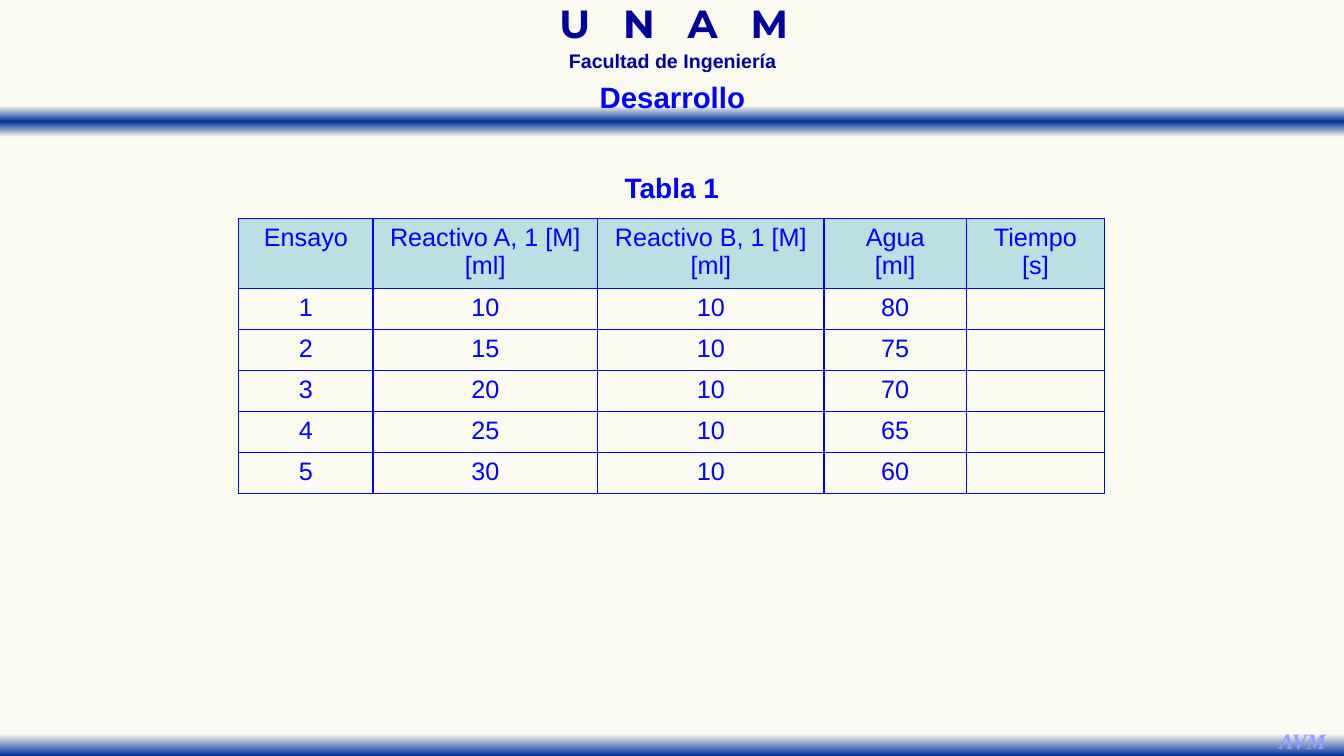
from lxml import etree
from pptx import Presentation
from pptx.dml.color import RGBColor
from pptx.enum.shapes import MSO_SHAPE as Shape
from pptx.enum.text import MSO_ANCHOR as Anchor, MSO_AUTO_SIZE as AutoSize, PP_ALIGN as Align
from pptx.oxml import parse_xml
from pptx.oxml.ns import nsdecls, qn
from pptx.util import Pt

CREAM = RGBColor(0xFA, 0xFA, 0xF0)
BAND_EDGE = RGBColor(0xFA, 0xFA, 0xF2)
BAND_BLUE = RGBColor(0x00, 0x33, 0x99)
NAVY = RGBColor(0x00, 0x00, 0x99)
BLUE = RGBColor(0x00, 0x00, 0xFF)
LILAC = RGBColor(0x99, 0x99, 0xFF)
HEADER_TEAL = RGBColor(0xBB, 0xE0, 0xE3)
WHITE = RGBColor(0xFF, 0xFF, 0xFF)


class SlideBuilder:
    """Holds the style and the current slide."""
    font = "Arial"
    color = BLUE
    table_size = 18

    def __init__(self, slide):
        self.slide = slide
        self.shapes = slide.shapes
        slide.background.fill.solid()
        slide.background.fill.fore_color.rgb = CREAM

    def run(self, paragraph, text, size, color=None, font=None,
            bold=False, italic=False, tracking=0):
        run = paragraph.add_run()
        run.text = text
        style = run.font
        style.name, style.size = font or self.font, Pt(size)
        style.bold, style.italic = bold, italic
        style.color.rgb = color or self.color
        if tracking:
            run.font._element.set("spc", str(tracking))

    def band(self, top, height, stops):
        """Full-width bar with a vertical gradient."""
        bar = self.shapes.add_shape(Shape.RECTANGLE, 0, Pt(top), Pt(960), Pt(height))
        marks = "".join(f'<a:gs pos="{pos * 1000}"><a:srgbClr val="{color}"/></a:gs>'
                        for pos, color in stops)
        gradient = parse_xml(f'<a:gradFill {nsdecls("a")} rotWithShape="1"><a:gsLst>{marks}'
                             '</a:gsLst><a:lin ang="5400000" scaled="0"/></a:gradFill>')
        bar.element.spPr.find(qn("a:prstGeom")).addnext(gradient)
        bar.line.fill.background()
        bar.shadow.inherit = False

    def fit(self, frame, wrap):
        frame.word_wrap = wrap
        frame.auto_size = AutoSize.SHAPE_TO_FIT_TEXT
        paragraph = frame.paragraphs[0]
        paragraph.alignment = Align.CENTER
        return paragraph

    def text(self, box, pieces, size, spacing=None, wrap=True, **style):
        """Centred one-line text; each piece is (text, tracking)."""
        frame = self.shapes.add_textbox(*map(Pt, box)).text_frame
        paragraph = self.fit(frame, wrap)
        if spacing:
            paragraph.line_spacing = spacing
        for words, tracking in pieces:
            self.run(paragraph, words, size, tracking=tracking, **style)

    def title(self, box, words, size):
        title = self.shapes.title
        title.left, title.top, title.width, title.height = map(Pt, box)
        paragraph = self.fit(title.text_frame, False)
        title.text_frame.vertical_anchor = Anchor.BOTTOM
        self.run(paragraph, words, size, bold=True)
        self.shapes.element.append(title.element)  # in front of the band

    def cell(self, cell, lines, fill, alpha=None):
        frame = cell.text_frame
        for index, line in enumerate(lines):
            paragraph = frame.add_paragraph() if index else frame.paragraphs[0]
            paragraph.alignment = Align.CENTER
            if line:
                self.run(paragraph, line, self.table_size)
        # Borders come before the fill
        properties = cell._tc.get_or_add_tcPr()
        for side in "LRTB":
            properties.append(parse_xml(
                f'<a:ln{side} {nsdecls("a")} w="12700"><a:solidFill>'
                f'<a:srgbClr val="{self.color}"/></a:solidFill></a:ln{side}>'))
        if fill is None:
            cell.fill.background()
            return
        cell.fill.solid()
        cell.fill.fore_color.rgb = fill
        if alpha:
            color = properties.find(qn("a:solidFill")).find(qn("a:srgbClr"))
            etree.SubElement(color, qn("a:alpha")).set("val", str(alpha * 1000))

    def table(self, left, top, widths, heights, header, rows):
        table = self.shapes.add_table(len(heights), len(widths), Pt(left), Pt(top),
                                      Pt(sum(widths)), Pt(sum(heights))).table
        table.first_row = table.horz_banding = False
        for column, width in zip(table.columns, widths):
            column.width = Pt(width)
        for row, height in zip(table.rows, heights):
            row.height = Pt(height)
        for c, lines in enumerate(header):
            self.cell(table.cell(0, c), lines, HEADER_TEAL)
        for r, values in enumerate(rows, 1):
            for c, value in enumerate(values):
                self.cell(table.cell(r, c), [value], WHITE if r % 2 else None, 20)


def main():
    deck = Presentation()
    deck.slide_width, deck.slide_height = Pt(960), Pt(540)
    page = SlideBuilder(deck.slides.add_slide(deck.slide_layouts[5]))

    # Institutional header and footer
    page.band(75.6, 22.4, [(0, BAND_EDGE), (50, BAND_BLUE), (100, BAND_EDGE)])
    page.text((340.5, 5, 281.5, 32.4), [("U N A ", 780), ("M", 0)], 28, spacing=0.7,
              color=NAVY, font="Montserrat", bold=True)
    page.text((352, 36, 257, 19.4), [("Facultad de Ingeniería", 0)], 14, spacing=0.7,
              color=NAVY, bold=True)
    page.band(518, 22, [(28, BAND_EDGE), (100, BAND_BLUE)])
    page.text((906, 516, 49, 26), [("AVM", 0)], 15.6, wrap=False,
              color=LILAC, font="Times New Roman", bold=True, italic=True)

    # Title
    page.title((420.5, 53, 119.5, 32.4), "Desarrollo", 21)

    # Table of trials: reagent A is traded for water
    header = [["Ensayo"], ["Reactivo A, 1 [M]", "[ml]"], ["Reactivo B, 1 [M]", "[ml]"],
              ["Agua", "[ml]"], ["Tiempo", "[s]"]]
    trials = [(str(n), str(5 + 5 * n), "10", str(85 - 5 * n), "") for n in range(1, 6)]
    page.table(170.6, 155.8, [95.8, 160.5, 161.8, 101.6, 98.8], [50] + [29.3] * 5,
               header, trials)
    page.text((41.8, 106.6, 876.2, 40.3), [("Tabla 1", 0)], 20, spacing=1.5, bold=True)

    deck.save("out.pptx")


if __name__ == "__main__":
    main()
